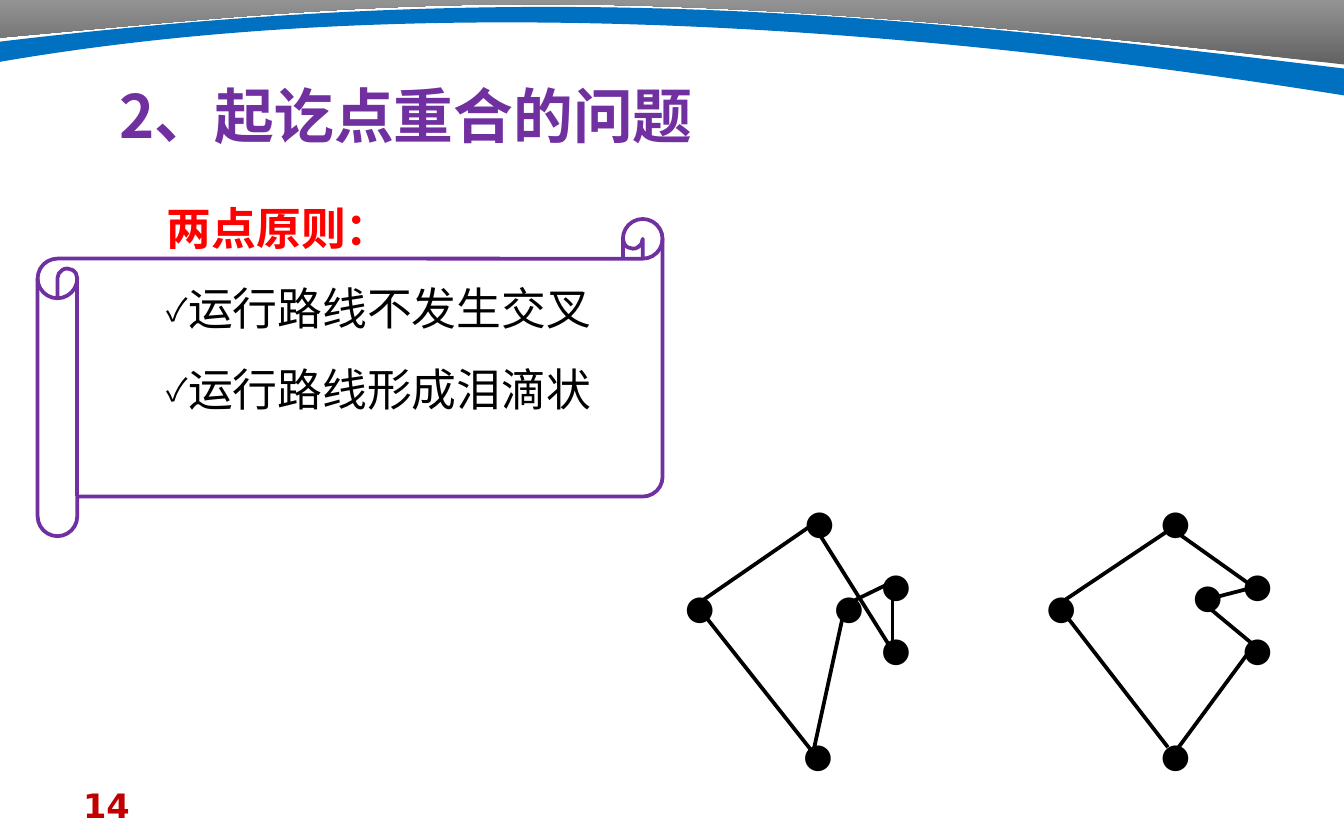
from itertools import pairwise
from lxml.etree import Element, SubElement
from pptx import Presentation
from pptx.dml.color import RGBColor
from pptx.enum.shapes import MSO_CONNECTOR, MSO_SHAPE
from pptx.enum.text import MSO_ANCHOR, MSO_AUTO_SIZE
from pptx.oxml.ns import qn
from pptx.util import Inches, Pt

WIDTH, HEIGHT = 10, 6.25
COLORS = {"purple": "7030A0", "red": "FF0000", "number": "C00000", "black": "000000",
          "blue": "0070C0", "dark": "626262", "light": "A6A6A6"}
CJK, LATIN = "Noto Sans CJK SC", "DejaVu Sans"

# Each tour lies on a grid of columns and rows: dot corners, then chains of edges
GRID = (180, 200)
CROSSING = {
    "dots": [(89, 0), (88, 173), (0, 63), (111, 63), (146, 94), (146, 47)],
    "chains": [[(105, 22), (18, 82), (105, 192), (129, 82), (164, 65), (164, 116), (105, 22)]],
}
TEARDROP = {
    "dots": [(85, 0), (85, 173), (0, 63), (109, 55), (146, 94), (146, 47)],
    "chains": [[(100, 27), (18, 82), (100, 188)],
               [(105, 192), (164, 112), (123, 78)],
               [(129, 78), (164, 69), (105, 27)]],
}


def color(name):
    return RGBColor.from_string(COLORS[name])


def style(para, size, name, face, bold=False):
    font = para.font
    font.size, font.name, font.bold = Pt(size), face, bold
    font.color.rgb = color(name)
    if face == CJK:
        for run in para.runs:
            SubElement(run._r.get_or_add_rPr(), qn("a:ea")).set("typeface", face)


def add_text(shapes, box, text, size, name, face, bold=False, wrap=True):
    frame = shapes.add_textbox(*map(Inches, box)).text_frame
    frame.word_wrap = wrap
    frame.text = text
    style(frame.paragraphs[0], size, name, face, bold)
    return frame


def add_outline(page, points, curves):
    """Closed outline; each index in curves turns three segments into one cubic curve."""
    points = [(Inches(x), Inches(y)) for x, y in points]
    builder = page.shapes.build_freeform(*points[0])
    builder.add_line_segments(points[1:], close=True)
    shape = builder.convert_to_shape()
    segments = list(shape._element.iter(qn("a:lnTo")))
    for first in curves:
        bend = Element(qn("a:cubicBezTo"))
        segments[first].addprevious(bend)
        for segment in segments[first:first + 3]:
            bend.append(segment[0])
            segment.getparent().remove(segment)
    shape.shadow.inherit = False
    shape.line.fill.background()
    return shape


def add_banner(page, box):
    left, top, width, _ = box

    def place(*shares):
        return [(left + x * width, top + y) for x, y in shares]

    # Grey sky
    sky = add_outline(page, place((1, 0.48), (0.443, -0.17), (0.308, 0), (0, 0.28),
                                  (0, 0.19), (0, -0.02), (1, -0.02)), [0])
    sky.fill.gradient()
    sky.fill.gradient_angle = 90
    for stop, name in zip(sky.fill.gradient_stops, ("dark", "light")):
        stop.color.rgb = color(name)
    # Blue ribbon
    ribbon = add_outline(page, place((0, 0.31), (0.403, -0.17), (0.652, 0.09), (1, 0.51),
                                     (1, 0.71), (0.605, 0.08), (0.267, 0), (0, 0.46)), [0, 4])
    ribbon.fill.solid()
    ribbon.fill.fore_color.rgb = color("blue")


def add_principles(page, box):
    frame = page.shapes.add_textbox(*map(Inches, box)).text_frame
    frame.word_wrap = True
    frame.margin_left = frame.margin_right = Inches(0.08)
    frame.margin_top = frame.margin_bottom = Inches(0.04)
    frame.text = "两点原则：\n运行路线不发生交叉\n运行路线形成泪滴状"
    for index, para in enumerate(frame.paragraphs):
        para.line_spacing = 1.5
        props = para._p.get_or_add_pPr()
        props.set("marL", "0")
        props.set("indent", str(Inches(0.41)))
        if index:
            SubElement(props, qn("a:buSzPct")).set("val", "70000")
            SubElement(props, qn("a:buFont")).set("typeface", CJK)
            SubElement(props, qn("a:buChar")).set("char", "✓")
        style(para, 24, "black" if index else "red", CJK, bold=not index)


def add_tour(page, box, tour):
    left, top, width, height = box
    shapes = page.shapes.add_group_shape().shapes

    def place(column, row):
        return left + column * width / GRID[0], top + row * height / GRID[1]

    # Stops
    for dot in tour["dots"]:
        frame = add_text(shapes, (*place(*dot), 0.34, 0.25), "●", 18, "black", LATIN, wrap=False)
        frame.auto_size = MSO_AUTO_SIZE.SHAPE_TO_FIT_TEXT
    # Legs
    for chain in tour["chains"]:
        for start, end in pairwise(chain):
            leg = shapes.add_connector(MSO_CONNECTOR.STRAIGHT,
                                       *map(Inches, place(*start) + place(*end)))
            leg.line.color.rgb = color("black")
            leg.line.width = Pt(2)
            SubElement(leg._element.spPr, qn("a:effectLst"))


def add_scroll(page, box):
    scroll = page.shapes.add_shape(MSO_SHAPE.HORIZONTAL_SCROLL, *map(Inches, box))
    scroll.shadow.inherit = False
    scroll.fill.background()
    scroll.line.color.rgb = color("purple")
    scroll.line.width = Pt(2)


def build_page(page):
    add_text(page.shapes, (0.52, 5.79, 2.33, 0.33), "14", 18, "number", LATIN, bold=True)
    add_banner(page, (0, 0, WIDTH, 0.71))
    title = add_text(page.shapes, (0.69, 0.53, 6.59, 0.64), " 2、起讫点重合的问题",
                     32, "purple", CJK, bold=True)
    title.vertical_anchor = MSO_ANCHOR.MIDDLE
    add_principles(page, (0.75, 1.25, 8.58, 3.84))
    for left, tour in ((5, CROSSING), (7.69, TEARDROP)):
        add_tour(page, (left, 3.68, 1.8, 2), tour)
    add_scroll(page, (0.28, 1.63, 4.65, 2.36))


def main():
    deck = Presentation()
    deck.slide_width, deck.slide_height = Inches(WIDTH), Inches(HEIGHT)
    build_page(deck.slides.add_slide(deck.slide_layouts[6]))
    deck.save("out.pptx")


if __name__ == "__main__":
    main()
